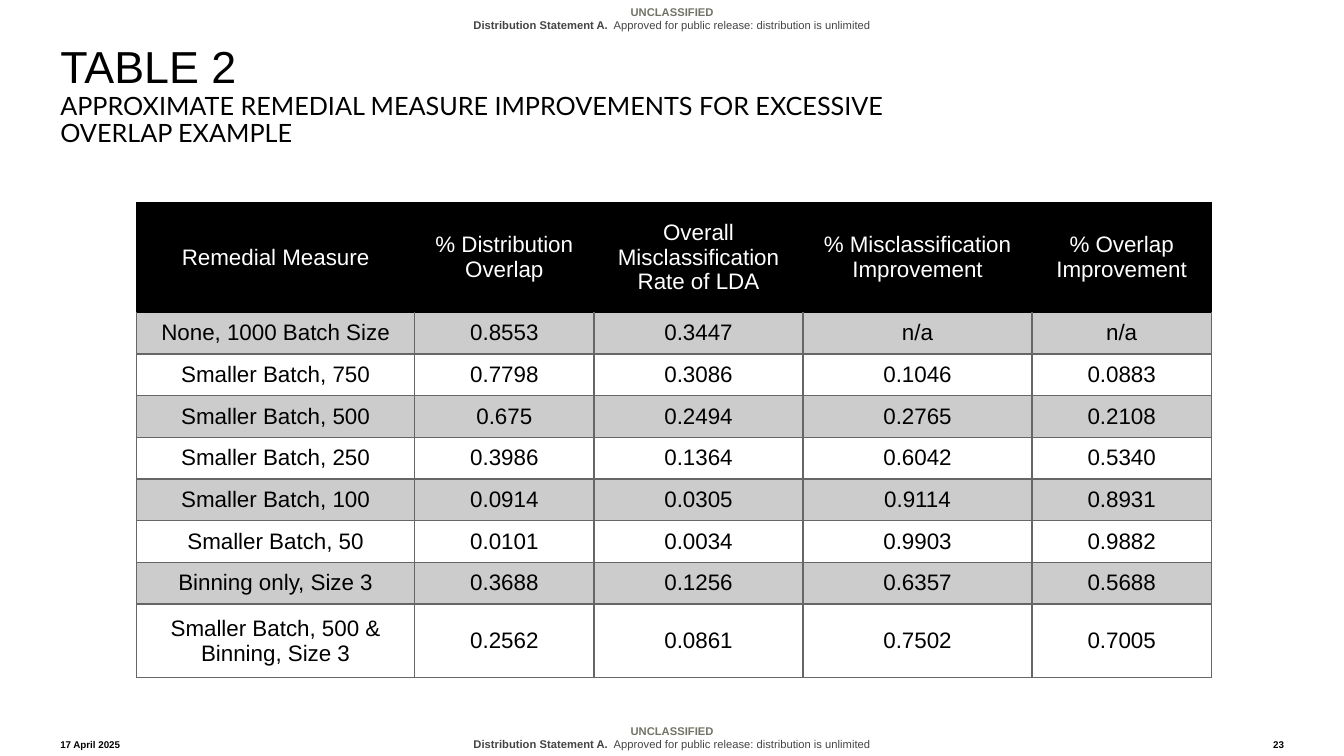
import pptx
import pptx.util
import pptx.dml.color
import pptx.enum.text
import lxml.etree

Cm, Pt = pptx.util.Cm, pptx.util.Pt
ALIGN = pptx.enum.text.PP_ALIGN
ANCHOR = pptx.enum.text.MSO_ANCHOR
COLORS = {"black": "000000", "white": "FFFFFF", "band": "CCCCCC",
          "grid": "666666", "marking": "727365", "statement": "444444"}


class SlideBuilder:
    """Holds the text style and the current slide."""
    font = "Arial"

    def __init__(self, prs):
        self.slide = prs.slides.add_slide(prs.slide_layouts[5])

    def run(self, p, text, size, color="black", bold=False, font=None):
        r = p.add_run()
        r.text = text
        r.font.name = font or self.font
        r.font.size = Pt(size)
        r.font.bold = bold
        r.font.color.rgb = pptx.dml.color.RGBColor.from_string(COLORS[color])

    def frame(self, sp, anchor, side=0, top=0):
        tf = sp.text_frame
        tf.word_wrap = True
        tf.auto_size = pptx.enum.text.MSO_AUTO_SIZE.NONE
        tf.vertical_anchor = anchor
        tf.margin_left = tf.margin_right = Cm(side)
        tf.margin_top = tf.margin_bottom = Cm(top)
        return tf

    def title(self, box, heading, subtitle):
        sp = self.slide.shapes.title
        sp.left, sp.top, sp.width, sp.height = map(Cm, box)
        p = self.frame(sp, ANCHOR.TOP).paragraphs[0]
        p.alignment = ALIGN.LEFT
        p.line_spacing = 0.9
        self.run(p, heading, 32)
        p.add_line_break()
        self.run(p, subtitle, 18, font="Lato")

    def text(self, box, paragraphs, size, align, anchor, side=0):
        """Each paragraph is a list of (text, color, bold) runs."""
        sp = self.slide.shapes.add_textbox(*map(Cm, box))
        tf = self.frame(sp, anchor, side, 0.13)
        for i, runs in enumerate(paragraphs):
            p = tf.add_paragraph() if i else tf.paragraphs[0]
            p.alignment = align
            for text, color, bold in runs:
                self.run(p, text, size, color, bold)

    def borders(self, cell, colors):
        tc_pr = cell._tc.get_or_add_tcPr()
        for side, color in zip("LRTB", colors):
            tc_pr.append(pptx.oxml.parse_xml(
                f'<a:ln{side} xmlns:a="http://schemas.openxmlformats.org/drawingml/2006/main" w="12700">'
                f'<a:solidFill><a:srgbClr val="{COLORS[color]}"/></a:solidFill></a:ln{side}>'))

    def cell(self, cell, text, fill, color, borders):
        cell.vertical_anchor = ANCHOR.MIDDLE
        cell.margin_left = cell.margin_right = Cm(0.28)
        cell.margin_top = cell.margin_bottom = 0
        self.borders(cell, borders)
        if fill:
            cell.fill.solid()
            cell.fill.fore_color.rgb = pptx.dml.color.RGBColor.from_string(COLORS[fill])
        else:
            cell.fill.background()
        p = cell.text_frame.paragraphs[0]
        p.alignment = ALIGN.CENTER
        self.run(p, text, 16, color)

    def table(self, left, top, widths, heights, rows):
        table = self.slide.shapes.add_table(
            len(rows), len(widths), Cm(left), Cm(top),
            Cm(sum(widths)), Cm(sum(heights))).table
        table.horz_banding = False
        for column, width in zip(table.columns, widths):
            column.width = Cm(width)
        for i, (height, values) in enumerate(zip(heights, rows)):
            table.rows[i].height = Cm(height)
            if i == 0:
                look = ("black", "white", ["black"] * 4)
            else:
                upper = "black" if i == 1 else "grid"
                look = ("band" if i % 2 else None, "black",
                        ["grid", "grid", upper, "grid"])
            for j, value in enumerate(values):
                self.cell(table.cell(i, j), value, *look)


def main():
    prs = pptx.Presentation()
    prs.slide_width, prs.slide_height = Cm(33.87), Cm(19.05)
    s = SlideBuilder(prs)

    # Markings at the bottom and top edges
    marking = [
        [("UNCLASSIFIED", "marking", True)],
        [("Distribution Statement A.", "statement", True),
         ("  Approved for public release: distribution is unlimited", "statement", False)],
    ]
    for top, anchor, side in ((18.11, ANCHOR.BOTTOM, 0), (0, ANCHOR.TOP, 0.25)):
        s.text((3.86, top, 26.16, 0.94), marking, 8, ALIGN.CENTER, anchor, side)

    # Title
    s.title((1.52, 1.14, 22.86, 2.54), "TABLE 2",
            "APPROXIMATE REMEDIAL MEASURE IMPROVEMENTS FOR EXCESSIVE OVERLAP EXAMPLE")

    # Date and slide number
    for left, width, text, align in ((1.52, 2.29, "17 April 2025", ALIGN.LEFT),
                                     (31.24, 1.12, "23", ALIGN.RIGHT)):
        s.text((left, 18.41, width, 0.64), [[(text, "black", True)]], 7, align, ANCHOR.BOTTOM)

    # Results table
    rows = [
        ("Remedial Measure", "% Distribution Overlap",
         "Overall Misclassification Rate of LDA",
         "% Misclassification Improvement", "% Overlap Improvement"),
        ("None, 1000 Batch Size", "0.8553", "0.3447", "n/a", "n/a"),
        ("Smaller Batch, 750", "0.7798", "0.3086", "0.1046", "0.0883"),
        ("Smaller Batch, 500", "0.675", "0.2494", "0.2765", "0.2108"),
        ("Smaller Batch, 250", "0.3986", "0.1364", "0.6042", "0.5340"),
        ("Smaller Batch, 100", "0.0914", "0.0305", "0.9114", "0.8931"),
        ("Smaller Batch, 50", "0.0101", "0.0034", "0.9903", "0.9882"),
        ("Binning only, Size 3", "0.3688", "0.1256", "0.6357", "0.5688"),
        ("Smaller Batch, 500 & Binning, Size 3", "0.2562", "0.0861", "0.7502", "0.7005"),
    ]
    s.table(3.44, 5.1, [7.01, 4.52, 5.27, 5.77, 4.52],
            [2.77] + [1.05] * 7 + [1.86], rows)

    prs.save("out.pptx")


if __name__ == "__main__":
    main()
